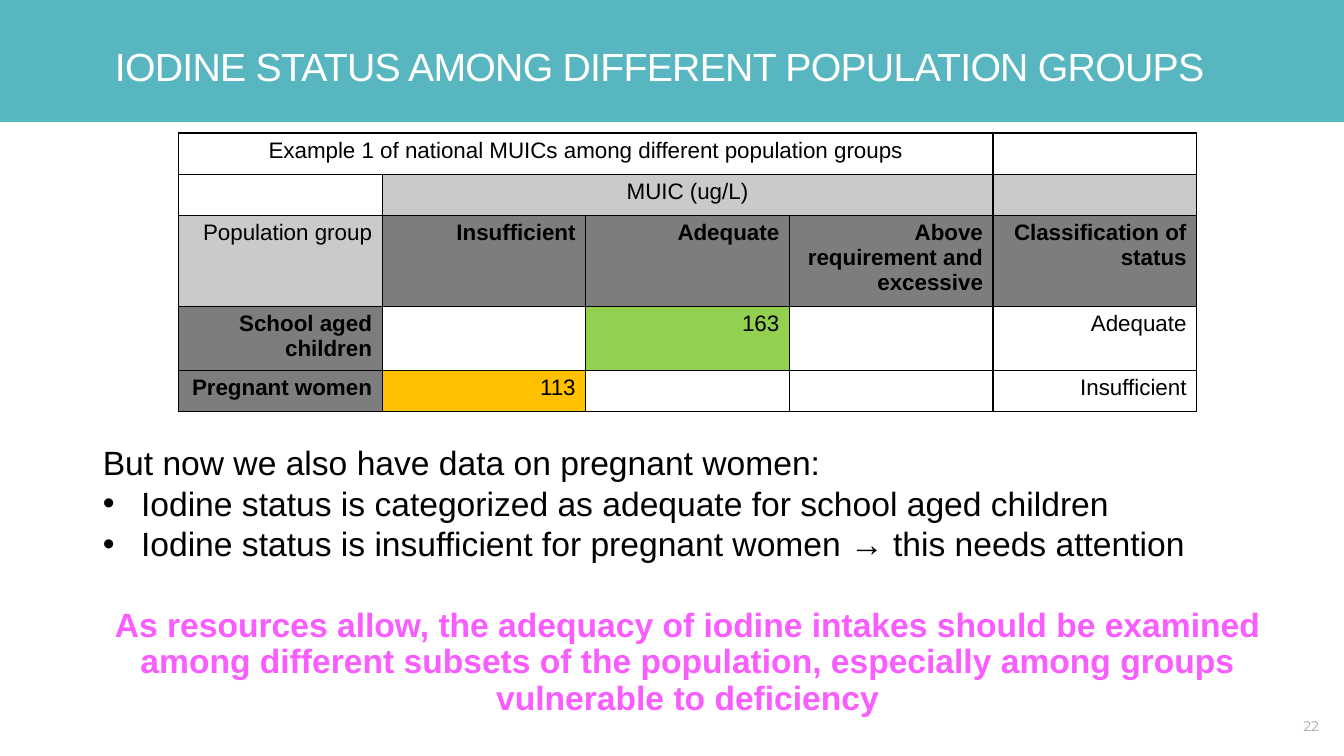
"""Build the slide on iodine status among different population groups."""
from dataclasses import dataclass

from lxml.etree import SubElement
from pptx import Presentation
from pptx.dml.color import RGBColor
from pptx.enum.shapes import MSO_SHAPE
from pptx.enum.text import MSO_ANCHOR, PP_ALIGN
from pptx.oxml.ns import qn
from pptx.util import Emu, Pt

EMU_PER_PX = 9144


@dataclass(frozen=True)
class Theme:
    font: str = "Arial"
    number_font: str = "Montserrat"
    teal: str = "58B6C0"
    white: str = "FFFFFF"
    black: str = "000000"
    light: str = "CACACA"
    dark: str = "7D7D7D"
    green: str = "92D050"
    amber: str = "FFC000"
    pink: str = "FA5DFF"
    faint: str = "A7A7A7"
    title_size: int = 28
    body_size: int = 24
    table_size: int = 16
    number_size: int = 10


T = Theme()
LEFT, CENTER, RIGHT = PP_ALIGN.LEFT, PP_ALIGN.CENTER, PP_ALIGN.RIGHT
COL_WIDTH = 202
ROW_HEIGHTS = (41, 41, 84, 59, 41)
MERGES = (((0, 0), (0, 3)), ((1, 1), (1, 3)))
CELLS = {
    (0, 0): ("Example 1 of national MUICs among different population groups", None, CENTER, False),
    (1, 1): ("MUIC (ug/L)", T.light, CENTER, False),
    (1, 4): ("", T.light, CENTER, False),
    (2, 0): ("Population group", T.light, RIGHT, False),
    (2, 1): ("Insufficient", T.dark, RIGHT, True),
    (2, 2): ("Adequate", T.dark, RIGHT, True),
    (2, 3): ("Above requirement and excessive", T.dark, RIGHT, True),
    (2, 4): ("Classification of status", T.dark, RIGHT, True),
    (3, 0): ("School aged children", T.dark, RIGHT, True),
    (3, 2): ("163", T.green, RIGHT, False),
    (3, 4): ("Adequate", None, RIGHT, False),
    (4, 0): ("Pregnant women", T.dark, RIGHT, True),
    (4, 1): ("113", T.amber, RIGHT, False),
    (4, 4): ("Insufficient", None, RIGHT, False),
}
BODY = (
    ("But now we also have data on pregnant women:", False),
    ("Iodine status is categorized as adequate for school aged children", True),
    ("Iodine status is insufficient for pregnant women → this needs attention", True),
)
ADVICE = (
    "As resources allow, the adequacy of iodine intakes should be examined among different "
    "subsets of the population, especially among groups vulnerable to deficiency"
)


def px(n):
    """Turn px into EMU."""
    return Emu(n * EMU_PER_PX)


def style(p, size, color, align=LEFT, bold=False, font=T.font):
    """Set the alignment and font of a paragraph."""
    p.alignment = align
    p.font.name = font
    p.font.size = Pt(size)
    p.font.bold = bold
    p.font.color.rgb = RGBColor.from_string(color)


def add_band(s):
    """Draw the teal band behind the title."""
    sp = s.shapes.add_shape(MSO_SHAPE.RECTANGLE, 0, 0, px(1333), px(121))
    sp.shadow.inherit = False
    sp.fill.solid()
    sp.fill.fore_color.rgb = RGBColor.from_string(T.teal)
    sp.line.fill.background()


def add_text(s, box, wrap=True, anchor=MSO_ANCHOR.TOP):
    """Add a text box without insets and return its text frame."""
    tf = s.shapes.add_textbox(*map(px, box)).text_frame
    tf.margin_left = tf.margin_top = tf.margin_right = tf.margin_bottom = 0
    tf.word_wrap = wrap
    tf.vertical_anchor = anchor
    return tf


def add_title(s):
    """Add the slide title."""
    p = add_text(s, (114, 34, 1102, 55), anchor=MSO_ANCHOR.BOTTOM).paragraphs[0]
    p.text = "IODINE STATUS AMONG DIFFERENT POPULATION GROUPS"
    p.line_spacing = Pt(25)
    style(p, T.title_size, T.white)
    p.font._rPr.set("spc", "-50")


def add_borders(cell):
    """Give a cell thin black borders on all sides."""
    tc_pr = cell._tc.get_or_add_tcPr()
    for side in ("a:lnL", "a:lnR", "a:lnT", "a:lnB"):
        ln = SubElement(tc_pr, qn(side), w=str(Pt(1)))
        SubElement(SubElement(ln, qn("a:solidFill")), qn("a:srgbClr"), val=T.black)


def fill_cell(cell, text, color, align, bold):
    """Set the borders, fill and text of a cell."""
    add_borders(cell)
    if color:
        cell.fill.solid()
        cell.fill.fore_color.rgb = RGBColor.from_string(color)
    else:
        cell.fill.background()
    p = cell.text_frame.paragraphs[0]
    p.text = text
    style(p, T.table_size, T.black, align, bold)


def add_status_table(s):
    """Add the table of MUIC by population group."""
    size = (177, 132, 5 * COL_WIDTH, sum(ROW_HEIGHTS))
    table = s.shapes.add_table(len(ROW_HEIGHTS), 5, *map(px, size)).table
    table.first_row = table.horz_banding = False
    for row, height in zip(table.rows, ROW_HEIGHTS):
        row.height = px(height)
    for col in table.columns:
        col.width = px(COL_WIDTH)
    for r in range(len(ROW_HEIGHTS)):
        for c in range(5):
            fill_cell(table.cell(r, c), *CELLS.get((r, c), ("", None, RIGHT, False)))
    for start, end in MERGES:
        table.cell(*start).merge(table.cell(*end))


def add_bullet(p):
    """Give a paragraph a hanging bullet."""
    p_pr = p._p.get_or_add_pPr()
    p_pr.set("marL", str(px(38)))
    p_pr.set("indent", str(px(-38)))
    SubElement(p_pr, qn("a:buFont"), typeface=T.font)
    SubElement(p_pr, qn("a:buChar"), char="•")


def add_body(s):
    """Add the findings and the advice below the table."""
    tf = add_text(s, (102, 443, 1160, 277))
    for i, (text, bulleted) in enumerate(BODY):
        p = tf.add_paragraph() if i else tf.paragraphs[0]
        p.text = text
        if bulleted:
            add_bullet(p)
        p.line_spacing = 0.9
        p.space_before = Pt(3 if i else 0)
        style(p, T.body_size, T.black)
    p = tf.add_paragraph()
    p.text = ADVICE
    p.line_spacing = 0.9
    p.space_before = Pt(32)
    style(p, T.body_size, T.pink, CENTER, True)


def add_number(s):
    """Add the slide number."""
    p = add_text(s, (1291, 712, 19, 17), wrap=False).paragraphs[0]
    p.text = "22"
    style(p, T.number_size, T.faint, CENTER, font=T.number_font)


def main():
    """Build and save the slide."""
    prs = Presentation()
    prs.slide_width, prs.slide_height = px(1333), px(750)
    s = prs.slides.add_slide(prs.slide_layouts[6])
    add_band(s)
    add_title(s)
    add_status_table(s)
    add_body(s)
    add_number(s)
    prs.save("out.pptx")


if __name__ == "__main__":
    main()
